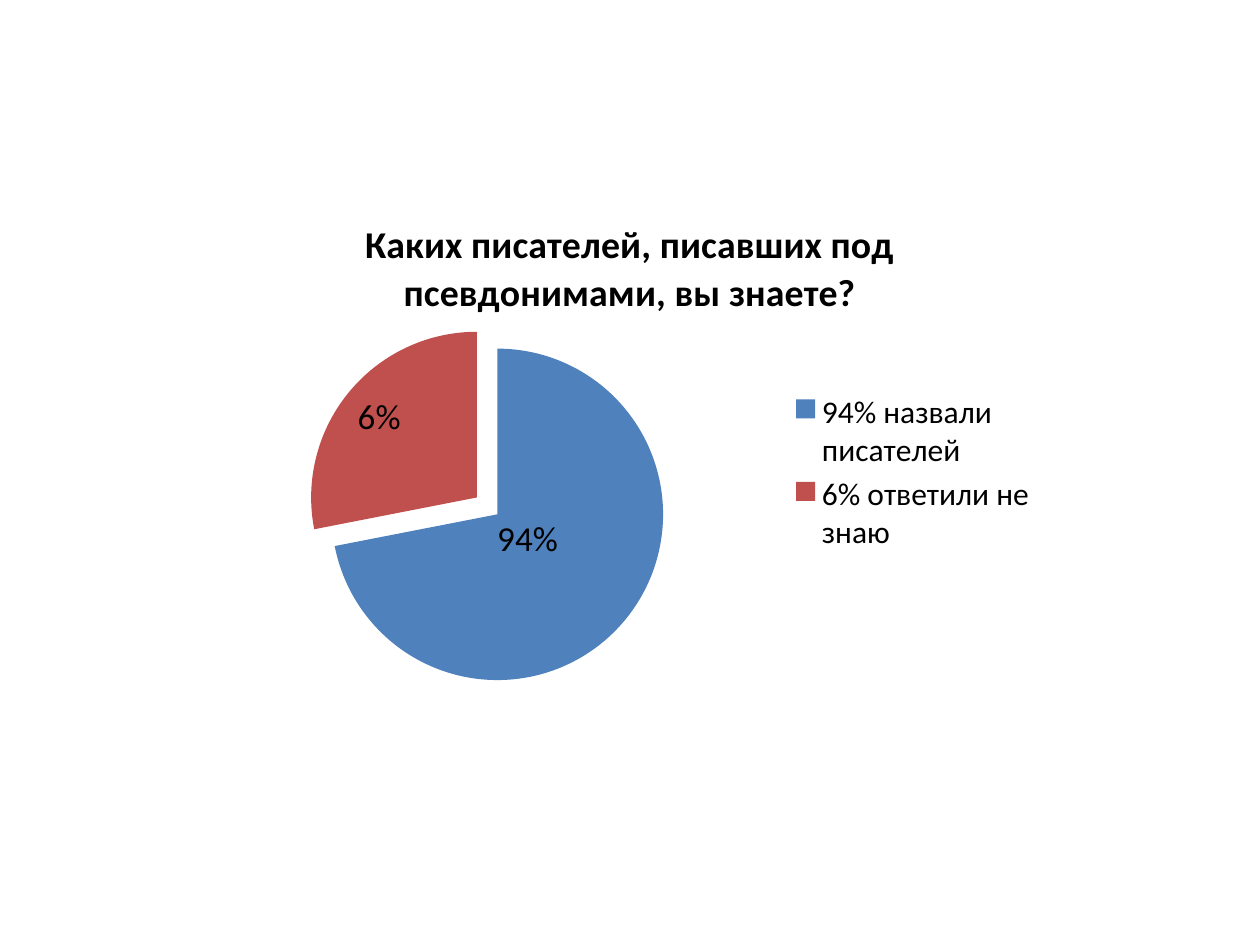
from dataclasses import dataclass

from lxml.etree import SubElement
from pptx import Presentation
from pptx.chart.data import CategoryChartData
from pptx.chart.point import Point
from pptx.dml.color import RGBColor
from pptx.enum.chart import XL_CHART_TYPE, XL_LABEL_POSITION, XL_LEGEND_POSITION
from pptx.oxml.ns import qn
from pptx.util import Inches, Pt

FONT = "Calibri"
BLACK = RGBColor(0x00, 0x00, 0x00)
BLUE = RGBColor(0x4F, 0x81, 0xBD)
RED = RGBColor(0xC0, 0x50, 0x4D)
TITLE = "Каких писателей, писавших под псевдонимами, вы знаете?"
EXPLOSION = 8


@dataclass(frozen=True)
class Answer:
    category: str
    value: float
    label: str
    color: RGBColor
    label_shift: tuple[float, float]


ANSWERS = [
    Answer("94% назвали писателей", 8.2, "94%", BLUE, (-0.04, -0.05)),
    Answer("6% ответили не знаю", 3.2, "6%", RED, (-0.04, -0.05)),
]


def style_font(font, size: float, bold: bool = False) -> None:
    font.name = FONT
    font.size = Pt(size)
    font.bold = bold
    font.color.rgb = BLACK


def make_layout(parent, **settings):
    layout = SubElement(parent, qn("c:layout"))
    manual = SubElement(layout, qn("c:manualLayout"))
    for name, value in settings.items():
        SubElement(manual, qn(f"c:{name}")).set("val", str(value))
    return layout


def place_plot(chart) -> None:
    area = chart._chartSpace.chart.plotArea
    for layout in area.findall(qn("c:layout")):
        area.remove(layout)
    area.insert(0, make_layout(area, layoutTarget="inner", xMode="edge", yMode="edge",
                               x=0.05, y=0.24, w=0.56, h=0.64))


def format_slice(point: Point, answer: Answer) -> None:
    point.format.fill.solid()
    point.format.fill.fore_color.rgb = answer.color
    label = point.data_label
    paragraph = label.text_frame.paragraphs[0]
    paragraph.text = answer.label
    style_font(paragraph.font, 20, bold=True)
    label.position = XL_LABEL_POSITION.CENTER


def shift_labels(series) -> None:
    for label, answer in zip(series._element.iter(qn("c:dLbl")), ANSWERS):
        across, down = answer.label_shift
        label.insert(1, make_layout(label, x=across, y=down))


def explode(series) -> None:
    first_slice = series._element.find(qn("c:dPt"))
    explosion = SubElement(series._element, qn("c:explosion"))
    explosion.set("val", str(EXPLOSION))
    first_slice.addprevious(explosion)


def add_pie(page, width: int, height: int) -> None:
    data = CategoryChartData()
    data.categories = [answer.category for answer in ANSWERS]
    data.add_series("Series 1", [answer.value for answer in ANSWERS])
    chart = page.shapes.add_chart(
        XL_CHART_TYPE.PIE, width // 6, int(height * 0.204),
        width * 2 // 3, int(height * 0.592), data).chart
    style_font(chart.font, 18)

    chart.has_title = True
    heading = chart.chart_title.text_frame.paragraphs[0]
    heading.text = TITLE
    style_font(heading.font, 21.6, bold=True)

    chart.has_legend = True
    chart.legend.position = XL_LEGEND_POSITION.RIGHT
    chart.legend.include_in_layout = False
    style_font(chart.legend.font, 18)

    plot = chart.plots[0]
    plot.vary_by_categories = True
    series = plot.series[0]
    series.data_labels.show_value = True
    for index, answer in enumerate(ANSWERS):
        format_slice(series.points[index], answer)
    shift_labels(series)
    explode(series)
    place_plot(chart)


def main() -> None:
    deck = Presentation()
    deck.slide_width, deck.slide_height = Inches(10), Inches(7.5)
    page = deck.slides.add_slide(deck.slide_layouts[6])
    add_pie(page, deck.slide_width, deck.slide_height)
    deck.save("out.pptx")


if __name__ == "__main__":
    main()
